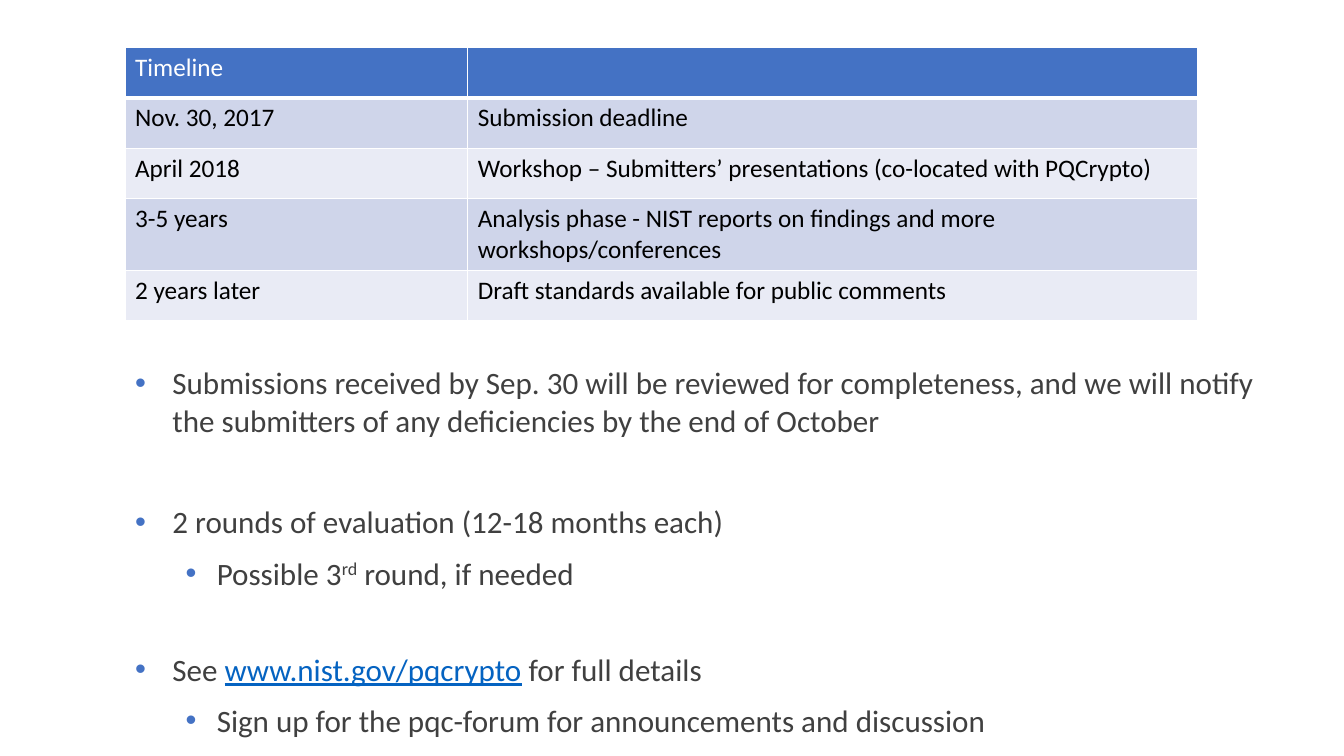
from lxml.etree import SubElement
from pptx import Presentation
from pptx.dml.color import RGBColor
from pptx.enum.text import MSO_ANCHOR, MSO_AUTO_SIZE
from pptx.oxml.ns import qn
from pptx.util import Inches, Pt

# Content
ROWS = [
    ("Timeline", ""),
    ("Nov. 30, 2017", "Submission deadline"),
    ("April 2018", "Workshop – Submitters’ presentations (co-located with PQCrypto)"),
    ("3-5 years", "Analysis phase - NIST reports on findings and more workshops/conferences"),
    ("2 years later", "Draft standards available for public comments"),
]
# Each point: level, space before in points, runs of (text, style)
POINTS = [
    (0, 0, [("Submissions received by Sep. 30 will be reviewed for completeness, "
             "and we will notify the submitters of any deficiencies by the end of October", "")]),
    (0, 46, [("2 rounds of evaluation (12-18 months each)", "")]),
    (1, 10, [("Possible 3", ""), ("rd", "super"), (" round, if needed", "")]),
    (0, 42, [("See ", ""), ("www.nist.gov/pqcrypto", "web"), (" for full details", "")]),
    (1, 10, [("Sign up for the pqc-forum for announcements and discussion", "")]),
]

# Look
THEME = {
    "font": "Calibri", "cell": 18, "body": 22.2,
    "accent": "4472C4", "bands": ("CFD5EA", "E9EBF5"), "white": "FFFFFF",
    "black": "000000", "text": "404040", "web": "0563C1",
}
LEFT = 1.24
COLS = (3.4, 7.24)
HEIGHTS = (0.5, 0.5, 0.5, 0.7, 0.5)
INDENTS = ((0.37, 0.37), (0.81, 0.31))  # text margin, hanging part


def color(name):
    return RGBColor.from_string(name)


def style(para, size, tint):
    font = para.font
    font.name, font.size, font.bold = THEME["font"], Pt(size), False
    font.color.rgb = color(tint)


def border(cell, widths):
    props = cell._tc.get_or_add_tcPr()
    for side, width in zip("LRTB", widths):
        line = SubElement(props, qn(f"a:ln{side}"), w=str(Pt(width)))
        fill = SubElement(line, qn("a:solidFill"))
        SubElement(fill, qn("a:srgbClr"), val=THEME["white"])


def bullet(para, level):
    margin, hang = INDENTS[level]
    para.level = level
    props = para._p.get_or_add_pPr()
    props.set("marL", str(Inches(margin)))
    props.set("indent", str(-Inches(hang)))
    tint = SubElement(props, qn("a:buClr"))
    SubElement(tint, qn("a:srgbClr"), val=THEME["accent"])
    SubElement(props, qn("a:buFont"), typeface="Arial")
    SubElement(props, qn("a:buChar"), char="•")


def add_timeline(slide):
    frame = slide.shapes.add_table(
        len(ROWS), len(COLS), Inches(LEFT), Inches(0.47),
        Inches(sum(COLS)), Inches(sum(HEIGHTS)))
    table = frame.table
    for col, width in zip(table.columns, COLS):
        col.width = Inches(width)
    for r, texts in enumerate(ROWS):
        table.rows[r].height = Inches(HEIGHTS[r])
        head = r == 0
        for c, text in enumerate(texts):
            cell = table.cell(r, c)
            border(cell, (1, 1, 3 if r == 1 else 1, 3 if head else 1))
            cell.fill.solid()
            cell.fill.fore_color.rgb = color(
                THEME["accent"] if head else THEME["bands"][(r - 1) % 2])
            cell.text = text
            style(cell.text_frame.paragraphs[0], THEME["cell"],
                  THEME["white" if head else "black"])


def add_points(slide):
    body = slide.placeholders[1]
    body.left, body.top = Inches(LEFT), Inches(3.56)
    body.width, body.height = Inches(11.51), Inches(3.47)
    frame = body.text_frame
    frame.word_wrap = True
    frame.auto_size = MSO_AUTO_SIZE.NONE
    frame.vertical_anchor = MSO_ANCHOR.TOP
    for i, (level, space, runs) in enumerate(POINTS):
        para = frame.add_paragraph() if i else frame.paragraphs[0]
        bullet(para, level)
        para.space_before = Pt(space)
        style(para, THEME["body"], THEME["text"])
        for text, kind in runs:
            run = para.add_run()
            run.text = text
            if kind == "super":
                run._r.get_or_add_rPr().set("baseline", "30000")
            elif kind == "web":
                run.font.underline = True
                run.font.color.rgb = color(THEME["web"])


def main():
    deck = Presentation()
    deck.slide_width, deck.slide_height = Inches(13.33), Inches(7.5)
    slide = deck.slides.add_slide(deck.slide_layouts[1])
    # The slide has no title
    title = slide.shapes.title._element
    title.getparent().remove(title)
    add_timeline(slide)
    add_points(slide)
    deck.save("out.pptx")


if __name__ == "__main__":
    main()
